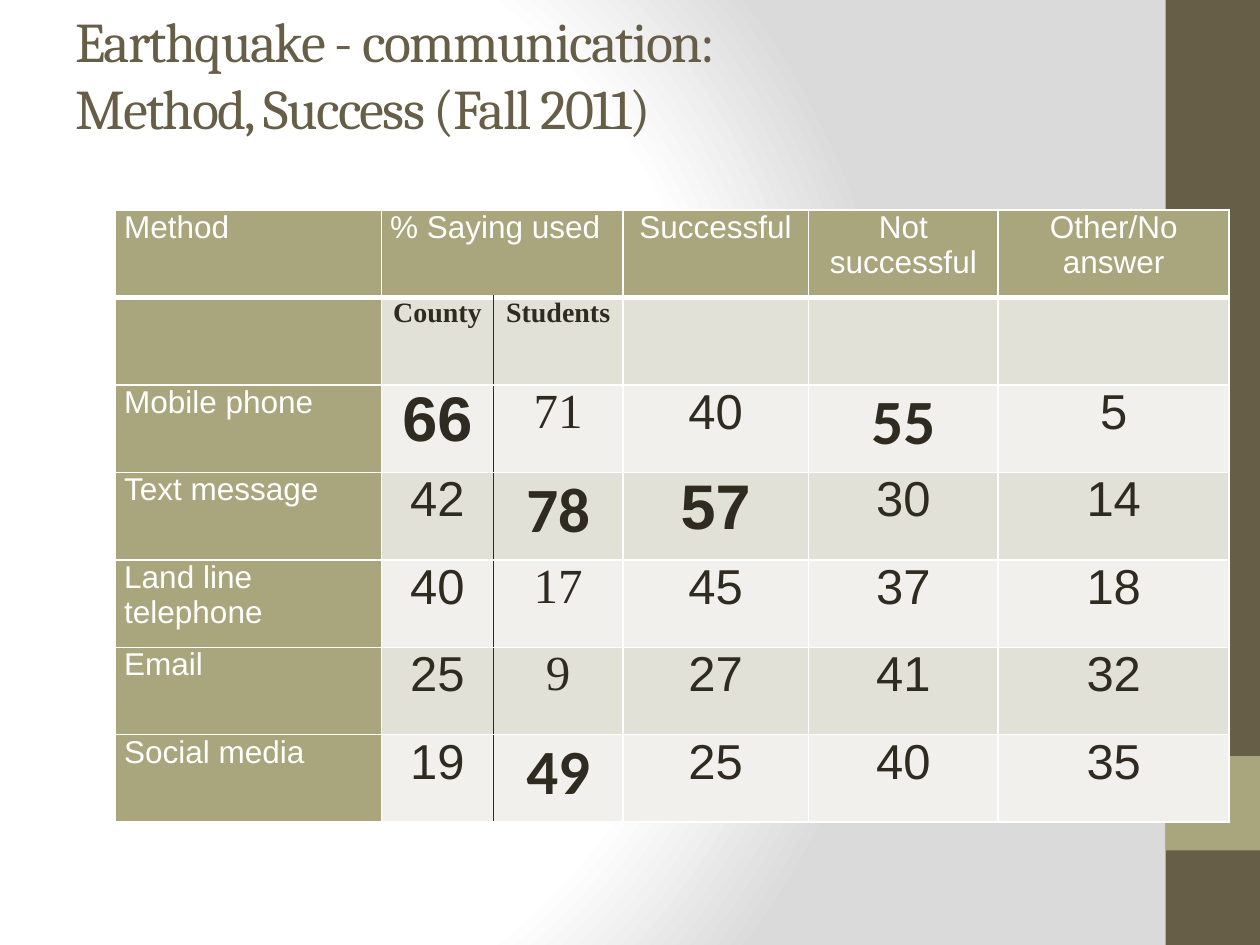
from dataclasses import dataclass

from pptx import Presentation
from pptx.dml.color import RGBColor
from pptx.enum import shapes, text
from pptx.oxml import parse_xml
from pptx.oxml.ns import nsdecls
from pptx.util import Pt


@dataclass(frozen=True)
class Theme:
    brown: str = "675E47"
    olive: str = "A9A57C"
    ink: str = "2F2B20"
    white: str = "FFFFFF"
    grey: str = "DADADA"
    dark_band: str = "E2E1D7"
    light_band: str = "F1F0EC"
    title: int = 32
    label: int = 18
    subhead: int = 16
    value: int = 28
    strong: int = 36


T = Theme()


def add_run(p, words, font, size, color, bold=False):
    r = p.add_run()
    r.text = words
    r.font.name = font
    r.font.size = Pt(size)
    r.font.bold = bold
    r.font.color.rgb = RGBColor.from_string(color)
    return r


def set_borders(cell, edges):
    tcPr = cell._tc.get_or_add_tcPr()
    for i, (side, color, width) in enumerate(edges):
        tcPr.insert(i, parse_xml(
            f'<a:ln{side} {nsdecls("a")} w="{Pt(width)}"><a:solidFill>'
            f'<a:srgbClr val="{color}"/></a:solidFill></a:ln{side}>'))


prs = Presentation()
prs.slide_width, prs.slide_height = Pt(720), Pt(540)
s = prs.slides.add_slide(prs.slide_layouts[6])

stops = "".join(f'<a:gs pos="{pos}000"><a:srgbClr val="{color}"/></a:gs>'
                for pos, color in [(0, T.white), (75, T.white), (100, T.grey)])
s._element.cSld.insert(0, parse_xml(
    f'<p:bg {nsdecls("p", "a")}><p:bgPr><a:gradFill rotWithShape="1">'
    f'<a:gsLst>{stops}</a:gsLst><a:path path="circle">'
    '<a:fillToRect l="20000" t="50000" r="100000" b="50000"/></a:path>'
    '</a:gradFill><a:effectLst/></p:bgPr></p:bg>'))

for top, height, color in [(0, 540, T.brown), (432, 54, T.olive)]:
    sp = s.shapes.add_shape(shapes.MSO_SHAPE.RECTANGLE,
                            Pt(666), Pt(top), Pt(54), Pt(height))
    sp.shadow.inherit = False
    sp.fill.solid()
    sp.fill.fore_color.rgb = RGBColor.from_string(color)
    sp.line.fill.background()

tf = s.shapes.add_textbox(Pt(36), Pt(0), Pt(648), Pt(84)).text_frame
tf.word_wrap = True
tf.vertical_anchor = text.MSO_ANCHOR.MIDDLE
p = tf.paragraphs[0]
for i, line in enumerate(["Earthquake - communication:", "Method, Success (Fall 2011)"]):
    if i:
        p.add_line_break()
    r = add_run(p, line, "Cambria", T.title, T.brown)
    r.font._element.set("spc", "-100")

rows = [
    ["Method", "% Saying used", "", "Successful", "Not successful", "Other/No answer"],
    ["", "County", "Students", "", "", ""],
    ["Mobile phone", "66", "71", "40", "55", "5"],
    ["Text message", "42", "78", "57", "30", "14"],
    ["Land line telephone", "40", "17", "45", "37", "18"],
    ["Email", "25", "9", "27", "41", "32"],
    ["Social media", "19", "49", "25", "40", "35"],
]
strong_fonts = {(2, 1): "Arial", (2, 4): "Calibri", (3, 2): "Calibri",
                (3, 3): "Arial", (6, 2): "Calibri"}
widths = [152, 64, 74, 106, 108.5, 132]
row_height = 50

table = s.shapes.add_table(len(rows), len(widths), Pt(66), Pt(120),
                           Pt(sum(widths)), Pt(row_height * len(rows))).table
table.first_row = table.horz_banding = False
for col, width in zip(table.columns, widths):
    col.width = Pt(width)
for row in table.rows:
    row.height = Pt(row_height)
table.cell(0, 1).merge(table.cell(0, 2))

for i, row in enumerate(rows):
    for j, words in enumerate(row):
        cell = table.cell(i, j)
        label = i == 0 or j == 0
        band = T.dark_band if i % 2 else T.light_band
        cell.fill.solid()
        cell.fill.fore_color.rgb = RGBColor.from_string(T.olive if label else band)
        cell.margin_left = cell.margin_right = Pt(5)
        cell.margin_top = cell.margin_bottom = Pt(0)
        set_borders(cell, [
            ("L", T.ink if i and j == 2 else T.white, 1),
            ("R", T.ink if i and j == 1 else T.white, 1),
            ("T", T.white, 1),
            ("B", T.white, 1 if i else 3),
        ])
        if not words:
            continue
        p = cell.text_frame.paragraphs[0]
        if j and (i or j > 1):
            p.alignment = text.PP_ALIGN.CENTER
        if label:
            add_run(p, words, "Arial", T.label, T.white)
        elif i == 1:
            add_run(p, words, "Times New Roman", T.subhead, T.ink, True)
        elif (i, j) in strong_fonts:
            add_run(p, words, strong_fonts[i, j], T.strong, T.ink, True)
        else:
            font = "Times New Roman" if j == 2 else "Arial"
            add_run(p, words, font, T.value, T.ink)

prs.save("out.pptx")
